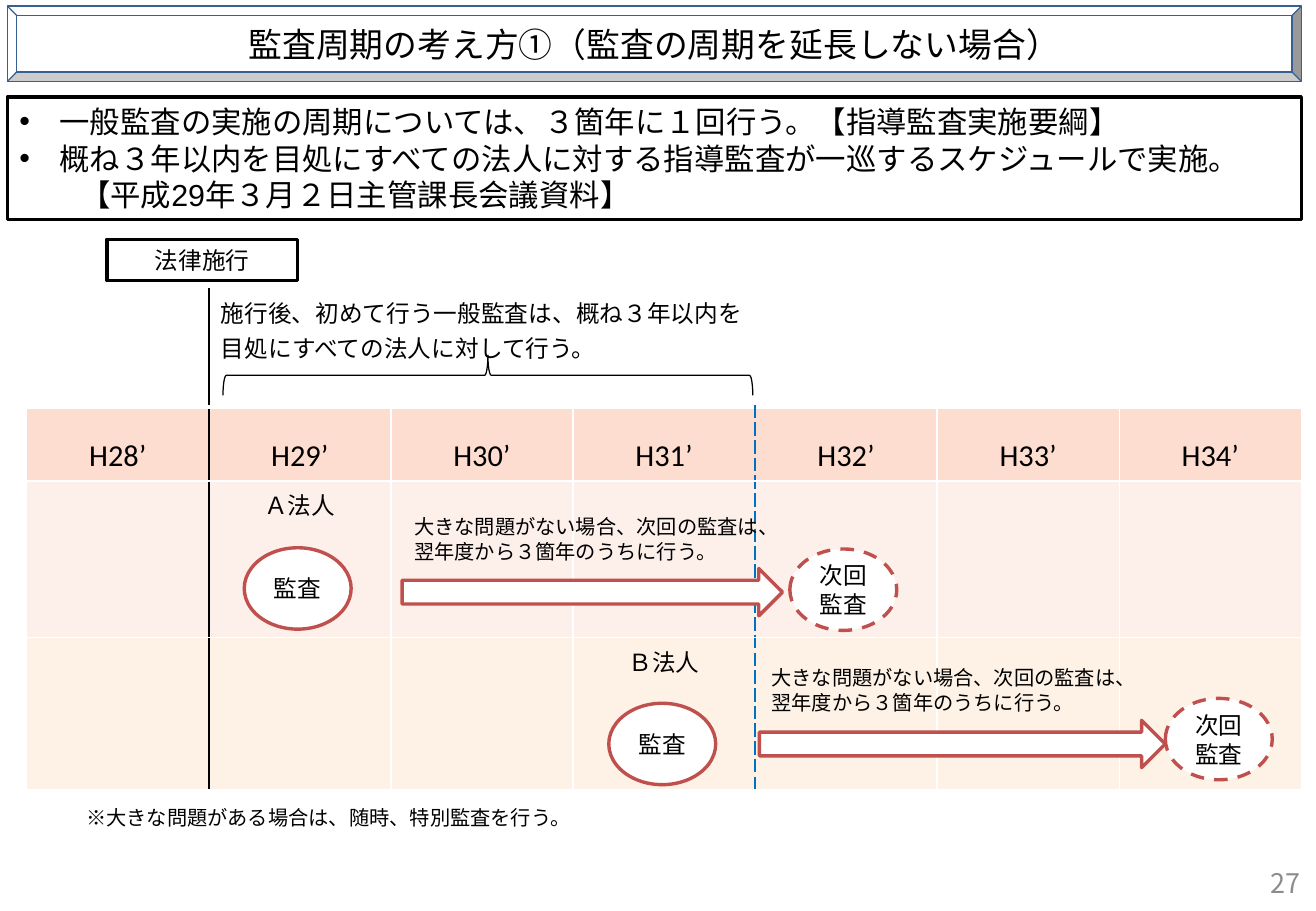
from lxml.etree import SubElement
from pptx import Presentation
from pptx.dml.color import RGBColor
from pptx.enum.dml import MSO_LINE
from pptx.enum.shapes import MSO_SHAPE as Preset
from pptx.enum.text import MSO_ANCHOR as Anchor, MSO_AUTO_SIZE as AutoSize, PP_ALIGN as Align
from pptx.oxml.ns import qn
from pptx.util import Inches, Pt

BLACK = RGBColor(0, 0, 0)
WHITE = RGBColor(255, 255, 255)
GRAY = RGBColor(0x8C, 0x8C, 0x8C)
NAVY = RGBColor(0x37, 0x60, 0x92)
RED = RGBColor(0xC0, 0x50, 0x4D)
BLUE = RGBColor(0x00, 0x70, 0xC0)
HEADER = RGBColor(0xFC, 0xDD, 0xCF)
ROW_A = RGBColor(0xFD, 0xEF, 0xE9)
ROW_B = RGBColor(0xFE, 0xF1, 0xE6)
GOTHIC = "Noto Sans CJK JP"


def write(frame, text, size=14, font=GOTHIC, color=BLACK, align=Align.CENTER, pitch=None):
    frame.text = text
    for paragraph in frame.paragraphs:
        paragraph.alignment = align
        paragraph.space_before = Pt(0)
        if pitch:
            paragraph.line_spacing = Pt(pitch)
        for run in paragraph.runs:
            run.font.size = Pt(size)
            run.font.name = font
            run.font.color.rgb = color
            SubElement(run.font._element, qn("a:ea"), typeface=GOTHIC)


def set_bullet(paragraph, margin, bullet):
    properties = paragraph._p.get_or_add_pPr()
    properties.set("marL", str(Inches(margin)))
    properties.set("indent", str(-Inches(margin) if bullet else 0))
    if bullet:
        SubElement(properties, qn("a:buFont"), typeface="Arial")
        SubElement(properties, qn("a:buChar"), char="•")
    else:
        SubElement(properties, qn("a:buNone"))


def set_border(cell, side, color, width=1, dash="solid"):
    line = SubElement(cell._tc.get_or_add_tcPr(), qn(f"a:ln{side}"), w=str(Pt(width)))
    fill = SubElement(line, qn("a:solidFill"))
    SubElement(fill, qn("a:srgbClr"), val=str(color))
    SubElement(line, qn("a:prstDash"), val=dash)


class AuditSlide:
    def __init__(self, presentation):
        self.slide = presentation.slides.add_slide(presentation.slide_layouts[1])
        self.shapes = self.slide.shapes

    def place(self, shape, box):
        shape.left, shape.top, shape.width, shape.height = map(Inches, box)
        shape.text_frame.word_wrap = True
        shape.text_frame.auto_size = AutoSize.NONE

    def shape(self, preset, box, line, width=2, text="", dashed=False, filled=True, **style):
        shape = self.shapes.add_shape(preset, *map(Inches, box))
        shape.shadow.inherit = False
        if filled:
            shape.fill.solid()
            shape.fill.fore_color.rgb = WHITE
        else:
            shape.fill.background()
        shape.line.color.rgb = line
        shape.line.width = Pt(width)
        if dashed:
            shape.line.dash_style = MSO_LINE.DASH
        if text:
            frame = shape.text_frame
            frame.margin_left = frame.margin_right = 0
            frame.vertical_anchor = Anchor.MIDDLE
            write(frame, text, font="Calibri", **style)
        return shape

    def title(self, text, box):
        self.shape(Preset.BEVEL, box, NAVY, 0.75)
        title = self.shapes.title
        self.place(title, box)
        title.text_frame.vertical_anchor = Anchor.MIDDLE
        write(title.text_frame, text, size=20)
        self.shapes._spTree.append(title._element)

    def body(self, items, box):
        body = self.slide.placeholders[1]
        self.place(body, box)
        body.fill.solid()
        body.fill.fore_color.rgb = WHITE
        body.line.color.rgb = BLACK
        body.line.width = Pt(2)
        body.text_frame.margin_right = 0
        write(body.text_frame, "\n".join(text for text, _, _ in items),
              size=18, font="Arial", align=Align.LEFT, pitch=21.6)
        for paragraph, (_, margin, bullet) in zip(body.text_frame.paragraphs, items):
            set_bullet(paragraph, margin, bullet)

    def text(self, text, box, anchor=Anchor.TOP, **style):
        label = self.shapes.add_textbox(*map(Inches, box))
        self.place(label, box)
        label.text_frame.margin_right = Inches(0.05)
        label.text_frame.vertical_anchor = anchor
        write(label.text_frame, text, **style)

    def table(self, box, heights, fills, texts):
        table = self.shapes.add_table(len(heights), 7, *map(Inches, box)).table
        table.first_row = table.horz_banding = False
        for column in table.columns:
            column.width = Inches(box[2] / 7)
        for row, (height, fill) in enumerate(zip(heights, fills)):
            table.rows[row].height = Inches(height)
            for column in range(7):
                self.cell(table.cell(row, column), row, column, fill)
        table.cell(0, 1).merge(table.cell(0, 3))
        for (row, column), (text, style) in texts.items():
            cell = table.cell(row, column)
            cell.vertical_anchor = Anchor.BOTTOM if row == 1 else Anchor.TOP
            write(cell.text_frame, text, **style)

    def cell(self, cell, row, column, fill):
        for side, edge in (("L", column), ("R", column + 1)):
            if edge == 1:
                set_border(cell, side, BLACK)
            elif edge == 4 and row:
                set_border(cell, side, BLUE, dash="dash")
            else:
                set_border(cell, side, WHITE)
        set_border(cell, "T", WHITE)
        set_border(cell, "B", WHITE, 1 if row else 3)
        cell.fill.solid()
        cell.fill.fore_color.rgb = fill

    def audit_cycle(self, audit, following, arrow, note):
        self.shape(Preset.OVAL, (*audit, 0.88, 0.67), RED, text="監査")
        self.shape(Preset.RIGHT_ARROW, arrow, RED)
        self.shape(Preset.OVAL, (*following, 0.88, 0.67), RED,
                   text="次回\n監査", dashed=True, pitch=17.2)
        self.text("大きな問題がない場合、次回の監査は、\n翌年度から３箇年のうちに行う。",
                  (*note, 3.05, 0.5), size=12, align=Align.LEFT, pitch=14.8)


def main():
    presentation = Presentation()
    presentation.slide_width, presentation.slide_height = Inches(10.83), Inches(7.5)
    slide = AuditSlide(presentation)
    slide.title("監査周期の考え方①（監査の周期を延長しない場合）", (0.06, 0.05, 10.65, 0.62))
    slide.body([
        ("一般監査の実施の周期については、３箇年に１回行う。【指導監査実施要綱】", 0.33, True),
        ("概ね３年以内を目処にすべての法人に対する指導監査が一巡するスケジュールで実施。", 0.33, True),
        ("【平成29年３月２日主管課長会議資料】", 0.5, False),
    ], (0.06, 0.8, 10.65, 1.01))

    texts = {(1, column): (f"H{28 + column}’", {"size": 18, "font": "Calibri"})
             for column in range(7)}
    texts[0, 1] = ("施行後、初めて行う一般監査は、概ね３年以内を目処にすべての法人に対して行う。",
                   {"align": Align.LEFT})
    texts[2, 1] = ("Ａ法人", {"font": "Calibri"})
    texts[3, 3] = ("Ｂ法人", {"font": "Calibri"})
    slide.table((0.22, 2.38, 10.49, 4.12), (0.97, 0.61, 1.29, 1.25),
                (WHITE, HEADER, ROW_A, ROW_B), texts)

    slide.shape(Preset.RECTANGLE, (0.88, 1.97, 1.57, 0.34), BLACK, text="法律施行")
    brace = slide.shape(Preset.LEFT_BRACE, (3.85, 0.91, 0.33, 4.36), BLACK, 0.75, filled=False)
    brace.rotation = 90
    slide.audit_cycle((2.01, 4.51), (6.5, 4.52), (3.31, 4.68, 3.13, 0.39), (3.31, 4.18))
    slide.audit_cycle((5.01, 5.79), (9.59, 5.75), (6.25, 5.93, 3.34, 0.39), (6.25, 5.42))
    slide.text("※大きな問題がある場合は、随時、特別監査を行う。", (0.36, 6.58, 4.64, 0.3), size=12)
    slide.text("27", (9.67, 7.08, 1.08, 0.37), Anchor.MIDDLE,
               size=16, color=GRAY, align=Align.RIGHT)
    presentation.save("out.pptx")


if __name__ == "__main__":
    main()
